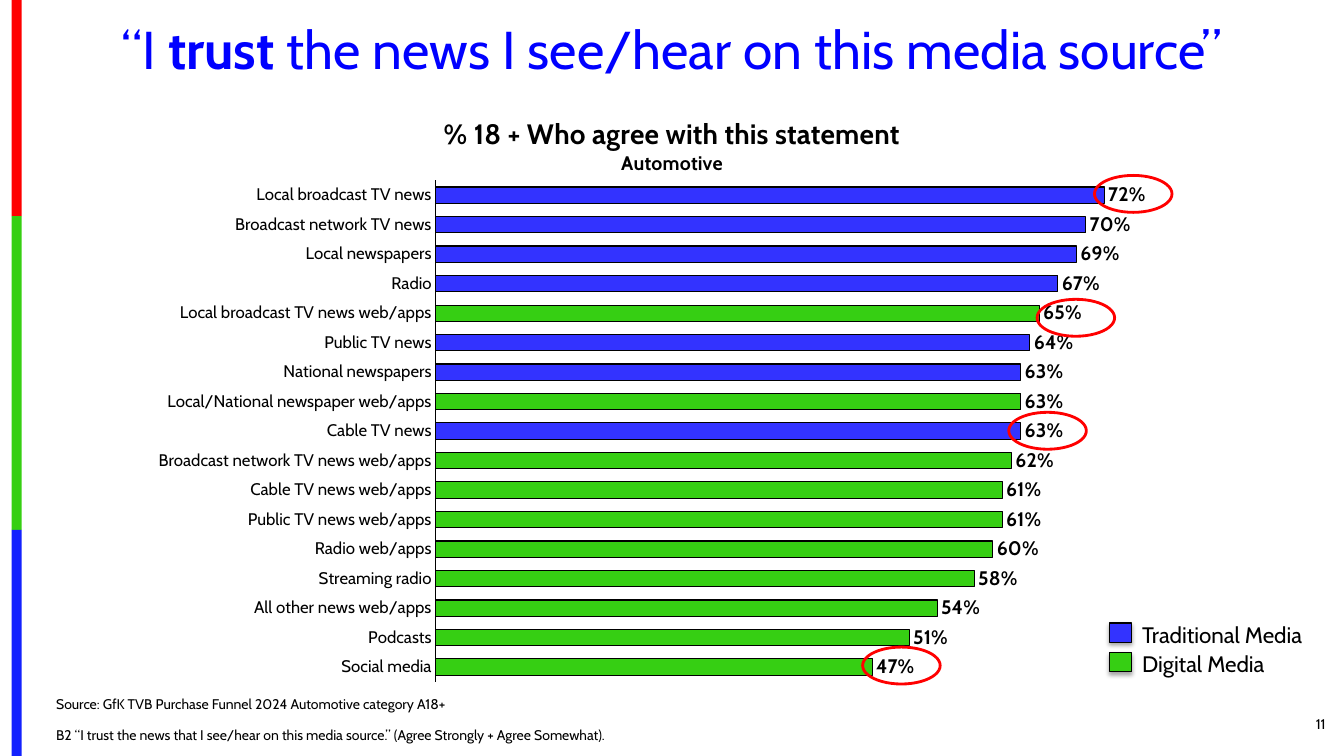
"""Build the slide on trust in news sources."""
from collections import namedtuple
from dataclasses import dataclass

from lxml import etree
from pptx import Presentation
from pptx.chart.data import CategoryChartData as Data
from pptx.dml.color import RGBColor as Rgb
from pptx.enum.chart import XL_CHART_TYPE as Kind, XL_LABEL_POSITION as Spot
from pptx.enum.chart import XL_TICK_MARK as Tick
from pptx.enum.shapes import MSO_SHAPE as Form
from pptx.enum.text import MSO_ANCHOR as Anchor, PP_ALIGN as Align
from pptx.oxml import parse_xml
from pptx.oxml.ns import nsdecls, qn
from pptx.util import Pt

Box = namedtuple("Box", "x y w h")


@dataclass(frozen=True)
class Theme:
    """Colours, face and type sizes of the slide."""
    face: str = "Cabin"
    ink: str = "000000"
    head: str = "0000FF"
    ring: str = "FF0000"
    blue: str = "3333FF"
    green: str = "36CF13"
    strip: tuple = ("FE0000", "36CF12", "1322FE")
    title: int = 38
    lead: int = 20
    sub: int = 14
    key: int = 16
    axis: int = 12
    note: int = 10


THEME = Theme()
TITLE = (("“I ", False), ("trust", True),
         (" the news I see/hear on this media source”", False))
NOTES = ("Source: GfK TVB Purchase Funnel 2024 Automotive category A18+",
         "B2 “I trust the news that I see/hear on this media source.” "
         "(Agree Strongly + Agree Somewhat).")
NEWS = (
    ("Local broadcast TV news", 0.72, THEME.blue),
    ("Broadcast network TV news", 0.70, THEME.blue),
    ("Local newspapers", 0.69, THEME.blue),
    ("Radio", 0.67, THEME.blue),
    ("Local broadcast TV news web/apps", 0.65, THEME.green),
    ("Public TV news", 0.64, THEME.blue),
    ("National newspapers", 0.63, THEME.blue),
    ("Local/National newspaper web/apps", 0.63, THEME.green),
    ("Cable TV news", 0.63, THEME.blue),
    ("Broadcast network TV news web/apps", 0.62, THEME.green),
    ("Cable TV news web/apps", 0.61, THEME.green),
    ("Public TV news web/apps", 0.61, THEME.green),
    ("Radio web/apps", 0.60, THEME.green),
    ("Streaming radio", 0.58, THEME.green),
    ("All other news web/apps", 0.54, THEME.green),
    ("Podcasts", 0.51, THEME.green),
    ("Social media", 0.47, THEME.green),
)
KEYS = (("Traditional Media", THEME.blue), ("Digital Media", THEME.green))
RINGS = ((771.8, 53.3), (730.8, 141.8), (710.6, 222.5), (606.2, 390.2))


def style(font, size, color=THEME.ink, bold=False):
    """Set face, size, colour and weight of a font."""
    font.name, font.size, font.bold = THEME.face, Pt(size), bold
    font.color.rgb = Rgb.from_string(color)


def paint(part, fill, line=None):
    """Fill a part and give it a thin line or none."""
    part.fill.solid()
    part.fill.fore_color.rgb = Rgb.from_string(fill)
    if line:
        part.line.color.rgb = Rgb.from_string(line)
        part.line.width = Pt(0.75)
    else:
        part.line.fill.background()


def shape(slide, form, box):
    """Add a preset shape without shadow."""
    item = slide.shapes.add_shape(form, *map(Pt, box))
    item.shadow.inherit = False
    return item


def text(slide, box, lines, size, align=Align.LEFT, anchor=Anchor.TOP, gap=0, wrap=True):
    """Add a text box with one paragraph per line."""
    frame = slide.shapes.add_textbox(*map(Pt, box)).text_frame
    frame.word_wrap, frame.vertical_anchor = wrap, anchor
    for i, line in enumerate(lines):
        para = frame.add_paragraph() if i else frame.paragraphs[0]
        para.text, para.alignment = line, align
        if i:
            para.space_before = Pt(gap)
        style(para.font, size)


def strip(slide, box):
    """Stack the coloured bands down the left edge."""
    top = box.y
    for color, part in zip(THEME.strip, (0.286, 0.415, 0.299)):
        high = box.h * part
        paint(shape(slide, Form.RECTANGLE, Box(box.x, top, box.w, high)), color)
        top += high


def heading(slide, box):
    """Place and write the slide title."""
    title = slide.shapes.title
    title.left, title.top, title.width, title.height = map(Pt, box)
    frame = title.text_frame
    frame.vertical_anchor = Anchor.MIDDLE
    para = frame.paragraphs[0]
    para.alignment, para.line_spacing = Align.CENTER, 0.9
    style(para.font, THEME.title, THEME.head)
    for words, bold in TITLE:
        run = para.add_run()
        run.text, run.font.bold = words, bold


def layout(host, **place):
    """Fix the place of a chart part as shares of the chart."""
    for old in host.findall(qn("c:layout")):
        host.remove(old)
    node = parse_xml(f'<c:layout {nsdecls("c")}><c:manualLayout/></c:layout>')
    for name, val in place.items():
        etree.SubElement(node[0], qn("c:" + name)).set("val", str(val))
    return node


def chart(slide, box):
    """Draw the bar chart and ring its key values."""
    data = Data(number_format="0%")
    data.categories = [name for name, _, _ in NEWS]
    data.add_series("Series 1", [val for _, val, _ in NEWS])
    graph = slide.shapes.add_chart(Kind.BAR_CLUSTERED, *map(Pt, box), data).chart
    graph.has_legend = False
    style(graph.font, THEME.note)
    frame = graph.chart_title.text_frame
    lead, sub = frame.paragraphs[0], frame.add_paragraph()
    lead.text, sub.text = "% 18 + Who agree with this statement", "Automotive"
    style(lead.font, THEME.lead, bold=True)
    style(sub.font, THEME.sub, bold=True)
    graph.chart_title.include_in_layout = False
    head = graph.chart_title._element
    head.find(qn("c:tx")).addnext(layout(head, xMode="edge", yMode="edge", x=0.34, y=0.02))
    area = graph.plots[0]._element.getparent()
    area.insert(0, layout(area, layoutTarget="inner", xMode="edge", yMode="edge",
                          x=0.336, y=0.137, w=0.592, h=0.863))
    cats, vals = graph.category_axis, graph.value_axis
    cats.reverse_order = True
    cats.major_tick_mark = cats.minor_tick_mark = Tick.NONE
    style(cats.tick_labels.font, THEME.axis)
    cats.format.line.color.rgb = Rgb.from_string(THEME.ink)
    cats.format.line.width = Pt(0.75)
    vals.minimum_scale, vals.maximum_scale = 0, 0.8
    vals.has_major_gridlines = vals.visible = False
    plot = graph.plots[0]
    plot.gap_width, plot.vary_by_categories = 83, False
    bars = plot.series[0]
    paint(bars.format, THEME.blue, THEME.ink)
    for i, (_, _, color) in enumerate(NEWS):
        if color != THEME.blue:
            paint(bars.points[i].format, color, THEME.ink)
    tags = bars.data_labels
    tags.show_value, tags.position = True, Spot.OUTSIDE_END
    tags.number_format, tags.number_format_is_linked = "0%", False
    style(tags.font, THEME.sub, bold=True)
    for x, y in RINGS:
        ring = shape(slide, Form.OVAL, Box(box.x + x, box.y + y, 55.4, 26.4))
        ring.fill.background()
        ring.line.color.rgb = Rgb.from_string(THEME.ring)
        ring.line.width = Pt(2)


def legend(slide, box):
    """List the media kinds with shaded swatches."""
    row = box.h / len(KEYS)
    for i, (name, color) in enumerate(KEYS):
        top = box.y + i * row
        mark = shape(slide, Form.RECTANGLE, Box(box.x, top + 5, 15.8, 13.7))
        paint(mark, color, THEME.ink)
        mark._element.spPr.find(qn("a:effectLst")).append(parse_xml(
            f'<a:outerShdw {nsdecls("a")} blurRad="{Pt(3.1)}" dist="{Pt(1.8)}" '
            f'dir="5400000" rotWithShape="0"><a:srgbClr val="{THEME.ink}">'
            '<a:alpha val="35000"/></a:srgbClr></a:outerShdw>'))
        text(slide, Box(box.x + 16, top, box.w - 16, 26.6), [name], THEME.key, wrap=False)


def main():
    """Build the slide and save it."""
    deck = Presentation()
    deck.slide_width, deck.slide_height = Pt(960), Pt(540)
    slide = deck.slides.add_slide(deck.slide_layouts[5])
    strip(slide, Box(8.3, 0, 7.2, 540))
    heading(slide, Box(33, 13, 894, 49))
    chart(slide, Box(10, 72, 896.4, 415.4))
    legend(slide, Box(792.7, 440, 151, 42.4))
    text(slide, Box(33, 502.6, 680.4, 31.7), NOTES, THEME.note, anchor=Anchor.BOTTOM, gap=10)
    text(slide, Box(876.2, 502.6, 77.8, 28.8), ["11"], THEME.note, Align.RIGHT, Anchor.MIDDLE)
    deck.save("out.pptx")


if __name__ == "__main__":
    main()
